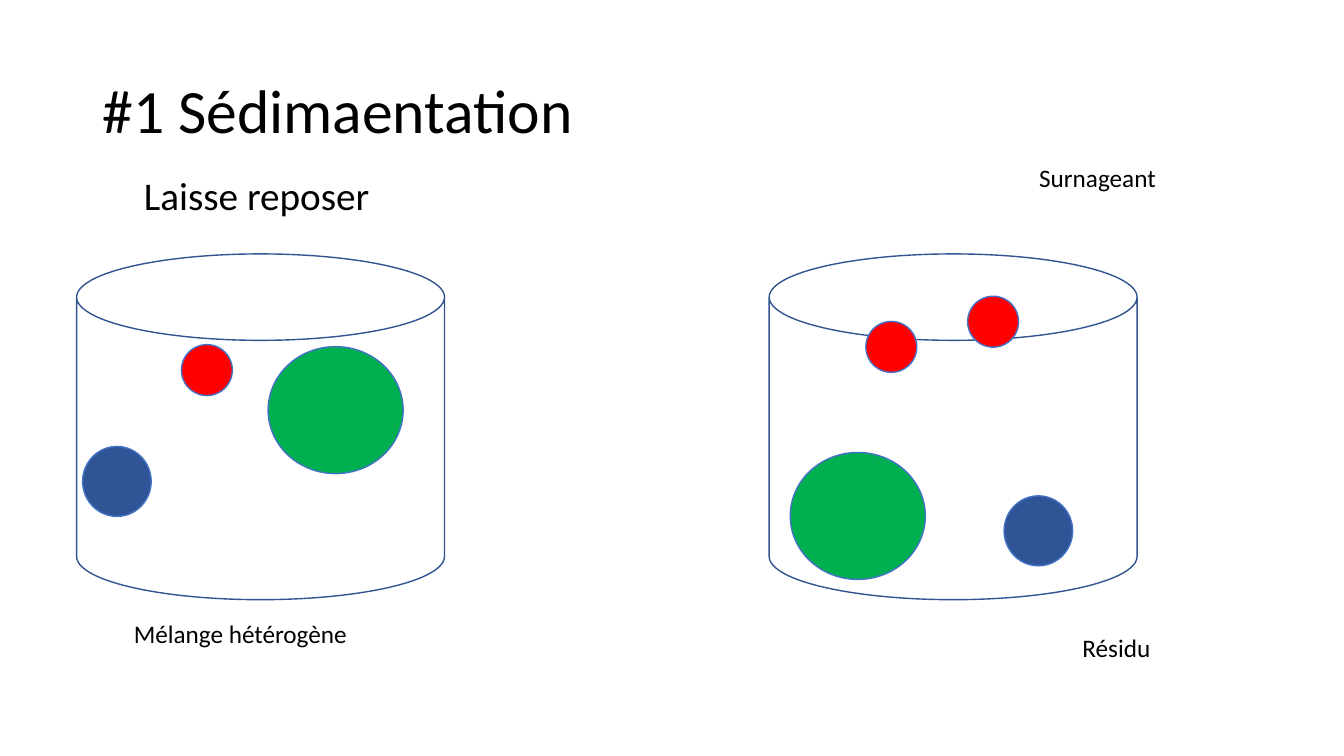
from pptx import Presentation
from pptx.dml.color import RGBColor
from pptx.enum import shapes, text
from pptx.util import Pt

FONT = "Calibri"
COLOURS = {
    "ink": "000000",
    "beaker": "325491",
    "outline": "4472C4",
    "red": "FF0000",
    "green": "00B050",
    "blue": "2F5597",
}
GRAIN_SIZES = {"red": (36.4, 36.4), "green": (96.5, 90.7), "blue": (49, 50)}
BEAKER_SIZE = (262.8, 247)
BEAKER_TOP = 181.4

MIXTURE = {
    "grains": [("red", 74.9, 64.8), ("green", 136.8, 66.2), ("blue", 4.3, 137.5)],
    "captions": [
        ("Laisse reposer", 28, 41, -62.6, 221),
        ("Mélange hétérogène", 18, 33.8, 257, 325.4),
    ],
}
SETTLED = {
    "grains": [
        ("red", 141.8, 30.2),
        ("red", 69.1, 48.2),
        ("green", 15.1, 141.8),
        ("blue", 167.8, 172.8),
    ],
    "captions": [
        ("Surnageant", 18, 185.8, -69.1, 220),
        ("Résidu", 18, 216.7, 266.4, 167),
    ],
}


def colour(name):
    """Return the named colour."""
    return RGBColor.from_string(COLOURS[name])


def set_font(paragraph, size):
    """Give a paragraph the slide's font and ink."""
    paragraph.font.name = FONT
    paragraph.font.size = Pt(size)
    paragraph.font.color.rgb = colour("ink")


def add_outline(slide, kind, box, line, fill=None):
    """Draw a flat shape in the box, filled only if a fill is named."""
    shape = slide.shapes.add_shape(kind, *map(Pt, box))
    shape.shadow.inherit = False
    shape.line.color.rgb = colour(line)
    shape.line.width = Pt(1)
    if fill:
        shape.fill.solid()
        shape.fill.fore_color.rgb = colour(fill)
    else:
        shape.fill.background()


def add_caption(slide, wording, size, left, top, width):
    """Write one line of text at the given place."""
    caption = slide.shapes.add_textbox(Pt(left), Pt(top), Pt(width), Pt(size * 1.2 + 7.2))
    frame = caption.text_frame
    frame.word_wrap = True
    frame.auto_size = text.MSO_AUTO_SIZE.SHAPE_TO_FIT_TEXT
    frame.text = wording
    set_font(frame.paragraphs[0], size)


def add_heading(slide, wording, box):
    """Place the slide title in the box."""
    heading = slide.shapes.title
    heading.left, heading.top, heading.width, heading.height = map(Pt, box)
    frame = heading.text_frame
    frame.text = wording
    frame.vertical_anchor = text.MSO_ANCHOR.MIDDLE
    frame.auto_size = text.MSO_AUTO_SIZE.NONE
    paragraph = frame.paragraphs[0]
    paragraph.alignment = text.PP_ALIGN.LEFT
    paragraph.line_spacing = 0.9
    set_font(paragraph, 44)


def add_beaker(slide, box, grains, captions):
    """Draw a beaker in the box with its grains and captions."""
    left, top, _, _ = box
    add_outline(slide, shapes.MSO_SHAPE.CAN, box, "beaker")
    for hue, x, y in grains:
        grain_box = (left + x, top + y, *GRAIN_SIZES[hue])
        add_outline(slide, shapes.MSO_SHAPE.FLOWCHART_CONNECTOR, grain_box, "outline", hue)
    for wording, size, x, y, width in captions:
        add_caption(slide, wording, size, left + x, top + y, width)


def main():
    """Build and save the sedimentation slide."""
    deck = Presentation()
    deck.slide_width, deck.slide_height = Pt(960), Pt(540)
    slide = deck.slides.add_slide(deck.slide_layouts[5])
    add_heading(slide, "#1 Sédimaentation", (66, 28.8, 828, 104.4))
    for left, stage in ((54.7, MIXTURE), (549.4, SETTLED)):
        add_beaker(slide, (left, BEAKER_TOP, *BEAKER_SIZE), **stage)
    deck.save("out.pptx")


if __name__ == "__main__":
    main()
